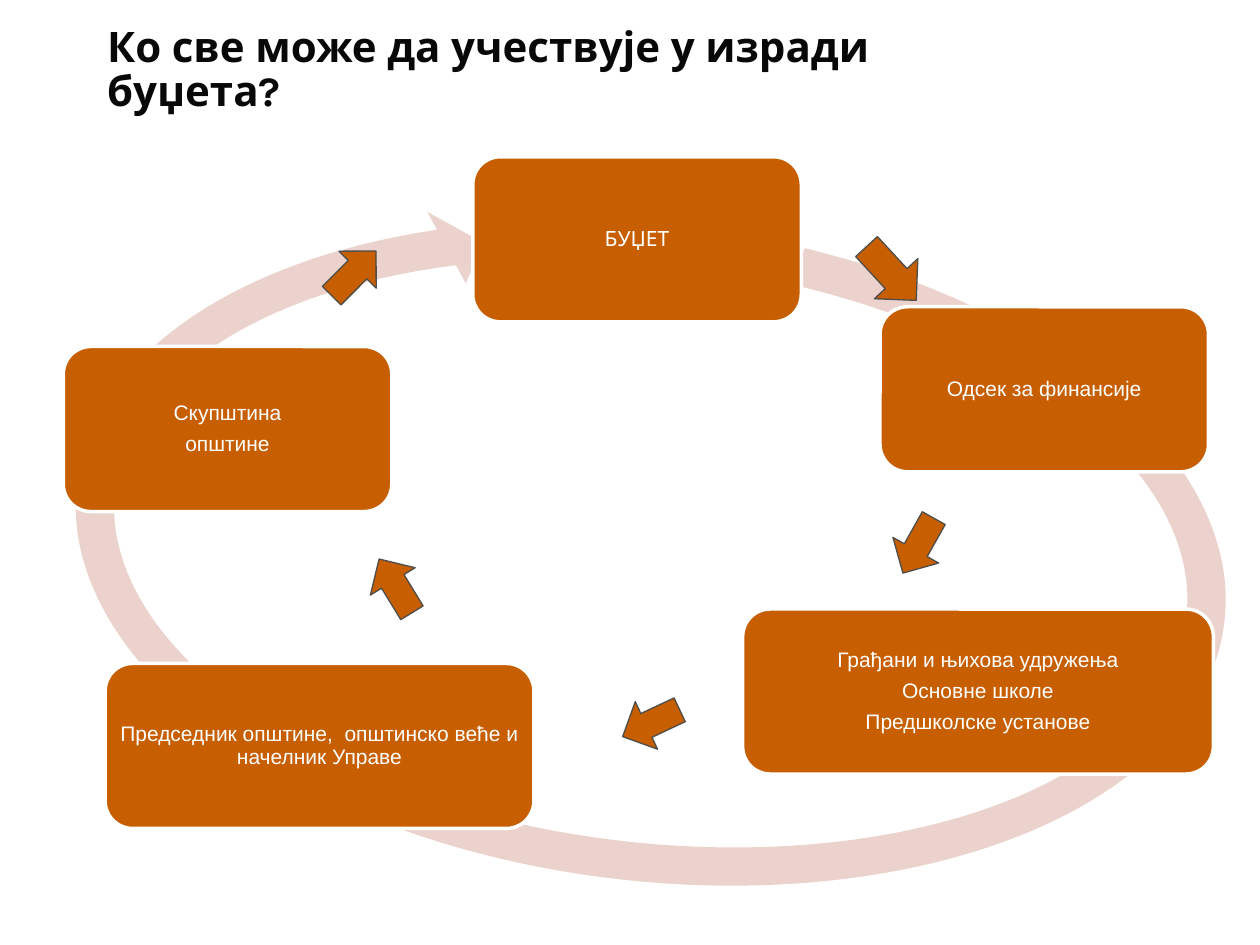
from dataclasses import dataclass

from pptx import Presentation
from pptx import util as u
from pptx.dml.color import RGBColor
from pptx.enum import shapes, text

COLORS = {
    "title": "080808",
    "ring": "EBD2CC",
    "accent": "C75E00",
    "outline": "4D4D4D",
    "white": "FFFFFF",
}
BOX_HEIGHT = 94.3
INSET = 3.6
RING_ADJUSTMENTS = (0.055, 3.307, 137.603, 173.955, 0.058)


@dataclass
class Stage:
    left: float
    top: float
    width: float
    lines: tuple[str, ...]
    font: str = "Arial"


@dataclass
class Arrow:
    left: float
    top: float
    rotation: float
    width: float = 30
    height: float = 36


STAGES = (
    Stage(270.2, 89.6, 187.7, ("БУЏЕТ",), "Karla"),
    Stage(502.9, 175.3, 187.7, ("Одсек за финансије",)),
    Stage(60.1, 379.1, 245,
          ("Председник општине,  општинско веће и начелник Управе",)),
    Stage(424.4, 348, 269,
          ("Грађани и њихова удружења", "Основне школе",
           "Предшколске установе")),
    Stage(36.2, 198, 187.7, ("Скупштина", "општине")),
)
ARROWS = (
    Arrow(492.5, 135.4, 317.3, 33.8, 41.8),
    Arrow(509.8, 293.8, 29.3),
    Arrow(357.1, 395.3, 64.8),
    Arrow(211, 316.8, 148.6),
    Arrow(187.2, 138.2, 224.9),
)


def rgb(name: str) -> RGBColor:
    return RGBColor.from_string(COLORS[name])


def apply_format(target, values: dict) -> None:
    for name, value in values.items():
        setattr(target, name, value)


def add_filled(page, kind, left: float, top: float, width: float,
               height: float, fill: str):
    shape = page.shapes.add_shape(
        kind, u.Pt(left), u.Pt(top), u.Pt(width), u.Pt(height))
    shape.shadow.inherit = False
    shape.fill.solid()
    shape.fill.fore_color.rgb = rgb(fill)
    return shape


def set_line(shape, color: str, width: float) -> None:
    shape.line.color.rgb = rgb(color)
    shape.line.width = u.Pt(width)


def add_title(page, wording: str) -> None:
    title = page.shapes.title
    apply_format(title, {"left": u.Pt(54), "top": u.Pt(12.2),
                         "width": u.Pt(544.3), "height": u.Pt(57.6)})
    frame = title.text_frame
    apply_format(frame, {"text": wording, "word_wrap": True,
                         "auto_size": text.MSO_AUTO_SIZE.NONE,
                         "vertical_anchor": text.MSO_ANCHOR.BOTTOM})
    para = frame.paragraphs[0]
    apply_format(para, {"alignment": text.PP_ALIGN.LEFT, "line_spacing": 0.88})
    apply_format(para.font, {"name": "Karla", "size": u.Pt(24), "bold": True})
    para.font.color.rgb = rgb("title")


def add_ring(page) -> None:
    ring = add_filled(page, shapes.MSO_SHAPE.CIRCULAR_ARROW,
                      29.5, 116.6, 684.7, 398.9, "ring")
    ring.line.fill.background()
    ring.rotation = 6.9
    for index, value in enumerate(RING_ADJUSTMENTS):
        ring.adjustments[index] = value


def add_stage(page, stage: Stage) -> None:
    box = add_filled(page, shapes.MSO_SHAPE.ROUNDED_RECTANGLE,
                     stage.left, stage.top, stage.width, BOX_HEIGHT, "accent")
    set_line(box, "white", 2)
    frame = box.text_frame
    apply_format(frame, {"word_wrap": True,
                         "vertical_anchor": text.MSO_ANCHOR.MIDDLE,
                         "margin_left": u.Pt(INSET),
                         "margin_right": u.Pt(INSET),
                         "margin_top": u.Pt(INSET),
                         "margin_bottom": u.Pt(INSET)})
    for index, line in enumerate(stage.lines):
        para = frame.add_paragraph() if index else frame.paragraphs[0]
        apply_format(para, {"alignment": text.PP_ALIGN.CENTER,
                            "line_spacing": 0.9, "space_after": u.Pt(4.8)})
        span = para.add_run()
        span.text = line
        apply_format(span.font, {"name": stage.font, "size": u.Pt(12)})
        span.font.color.rgb = rgb("white")


def add_arrow(page, arrow: Arrow) -> None:
    shape = add_filled(page, shapes.MSO_SHAPE.DOWN_ARROW, arrow.left,
                       arrow.top, arrow.width, arrow.height, "accent")
    set_line(shape, "outline", 0.75)
    shape.rotation = arrow.rotation


def main() -> None:
    deck = Presentation()
    apply_format(deck, {"slide_width": u.Pt(720), "slide_height": u.Pt(540)})
    page = deck.slides.add_slide(deck.slide_layouts.get_by_name("Title Only"))
    add_title(page, "Ко све може да учествује у изради буџета?")
    add_ring(page)
    for stage in STAGES:
        add_stage(page, stage)
    for arrow in ARROWS:
        add_arrow(page, arrow)
    deck.save("out.pptx")


if __name__ == "__main__":
    main()
